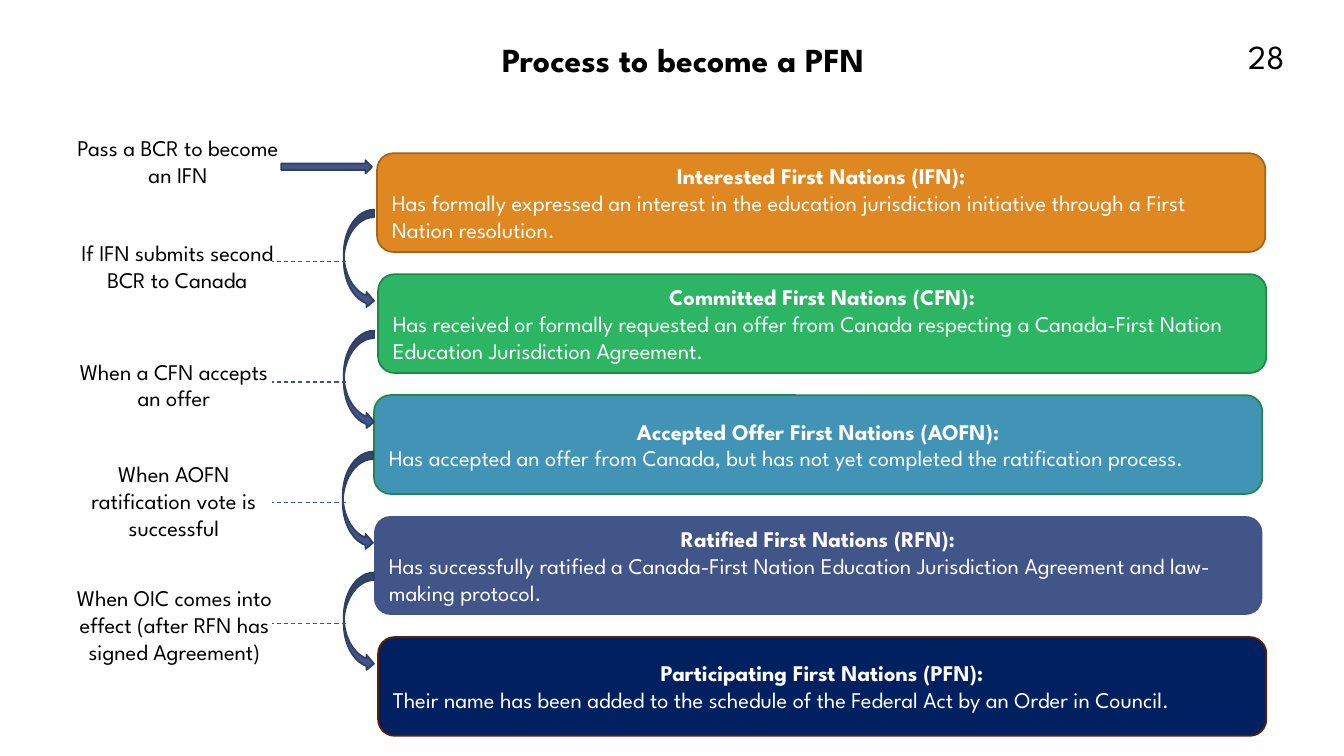
"""Build the slide on the steps to become a Participating First Nation."""
import pptx
import pptx.util
import pptx.dml.color
import pptx.enum.dml
import pptx.enum.shapes
import pptx.enum.text
import pptx.oxml
import pptx.oxml.ns

Inches, Pt = pptx.util.Inches, pptx.util.Pt
RGB = pptx.dml.color.RGBColor.from_string
SHAPE = pptx.enum.shapes.MSO_SHAPE
ALIGN = pptx.enum.text.PP_ALIGN
ANCHOR = pptx.enum.text.MSO_ANCHOR
COLORS = {
    "black": "000000", "white": "FFFFFF", "slate": "415588", "slate_edge": "303F65",
    "orange": "DF8822", "orange_edge": "A56519", "green": "2CB663", "green_edge": "218749",
    "blue": "4294B6", "navy": "002060", "brown": "5E2005",
}
STEP = 1.2


def add_shape(kind, left, top, width, height, fill, edge):
    sp = s.shapes.add_shape(kind, Inches(left), Inches(top), Inches(width), Inches(height))
    sp.shadow.inherit = False
    sp.fill.solid()
    sp.fill.fore_color.rgb = RGB(COLORS[fill])
    if edge:
        sp.line.color.rgb = RGB(COLORS[edge])
        sp.line.width = Pt(1.25)
    else:
        sp.line.fill.background()
    sp.text_frame.word_wrap = True
    sp.text_frame.vertical_anchor = ANCHOR.MIDDLE
    return sp


def write(p, text, size, color, align, bold=False):
    p.text = text
    p.alignment = align
    p.font.name = "League Spartan"
    p.font.size = Pt(size)
    p.font.bold = bold
    p.font.color.rgb = RGB(COLORS[color])


prs = pptx.Presentation()
prs.slide_width, prs.slide_height = Inches(13.33), Inches(7.5)
s = prs.slides.add_slide(prs.slide_layouts[5])

title = s.shapes.title
title.left, title.top, title.width, title.height = Inches(2.79), Inches(0.38), Inches(7.97), Inches(0.53)
tf = title.text_frame
tf.auto_size = pptx.enum.text.MSO_AUTO_SIZE.NONE
tf.vertical_anchor = ANCHOR.TOP
write(tf.paragraphs[0], "Process to become a PFN", 24, "black", ALIGN.CENTER, True)
tf.paragraphs[0].line_spacing = 0.9

number = s.shapes.add_textbox(Inches(11.89), Inches(0.31), Inches(0.95), Inches(0.46))
number.text_frame.word_wrap = True
write(number.text_frame.paragraphs[0], "28", 24, "black", ALIGN.RIGHT)

stages = [
    (3.74, "orange", "orange_edge", "Interested First Nations (IFN):",
     "Has formally expressed an interest in the education jurisdiction initiative through a First Nation resolution."),
    (3.75, "green", "green_edge", "Committed First Nations (CFN):",
     "Has received or formally requested an offer from Canada respecting a Canada-First Nation Education Jurisdiction Agreement."),
    (3.71, "blue", "green_edge", "Accepted Offer First Nations (AOFN):",
     "Has accepted an offer from Canada, but has not yet completed the ratification process."),
    (3.71, "slate", None, "Ratified First Nations (RFN):",
     "Has successfully ratified a Canada-First Nation Education Jurisdiction Agreement and law-making protocol."),
    (3.75, "navy", "brown", "Participating First Nations (PFN):",
     "Their name has been added to the schedule of the Federal Act by an Order in Council."),
]
for i, (left, fill, edge, heading, detail) in enumerate(stages):
    sp = add_shape(SHAPE.ROUNDED_RECTANGLE, left, 1.52 + i * STEP, 8.81, 0.98, fill, edge)
    tf = sp.text_frame
    write(tf.paragraphs[0], heading, 16, "white", ALIGN.CENTER, True)
    write(tf.add_paragraph(), detail, 16, "white", ALIGN.LEFT)

triggers = [
    (0.65, 1.25, 2.23, 0.69, "Pass a BCR to become an IFN"),
    (0.61, 2.15, 2.3, 0.98, "If IFN submits second BCR to Canada"),
    (0.61, 3.47, 2.23, 0.69, "When a CFN accepts an offer"),
    (0.61, 4.62, 2.23, 0.69, "When AOFN ratification vote is successful"),
    (0.58, 5.85, 2.3, 0.69, "When OIC comes into effect (after RFN has signed Agreement)"),
]
for left, top, width, height, text in triggers:
    sp = add_shape(SHAPE.ROUNDED_RECTANGLE, left, top, width, height, "white", "white")
    sp.adjustments[0] = 0
    write(sp.text_frame.paragraphs[0], text, 16, "black", ALIGN.CENTER)

for i, left in enumerate([3.41, 3.41, 3.4, 3.41]):
    arrow = add_shape(SHAPE.CURVED_LEFT_ARROW, left, 2.08 + i * STEP, 0.3, 0.98, "slate", "slate_edge")
    arrow._element.spPr.find(pptx.oxml.ns.qn("a:xfrm")).set("flipH", "1")
    y = Inches(2.59 + i * STEP)
    link = s.shapes.add_connector(pptx.enum.shapes.MSO_CONNECTOR.STRAIGHT, Inches(3.43), y, Inches(2.7), y)
    link.line.color.rgb = RGB(COLORS["slate"])
    link.line.width = Pt(0.75)
    link.line.dash_style = pptx.enum.dml.MSO_LINE.DASH
    link._element.spPr.append(pptx.oxml.parse_xml(f"<a:effectLst {pptx.oxml.ns.nsdecls('a')}/>"))

add_shape(SHAPE.RIGHT_ARROW, 2.79, 1.59, 0.9, 0.13, "slate", "slate_edge")

prs.save("out.pptx")
